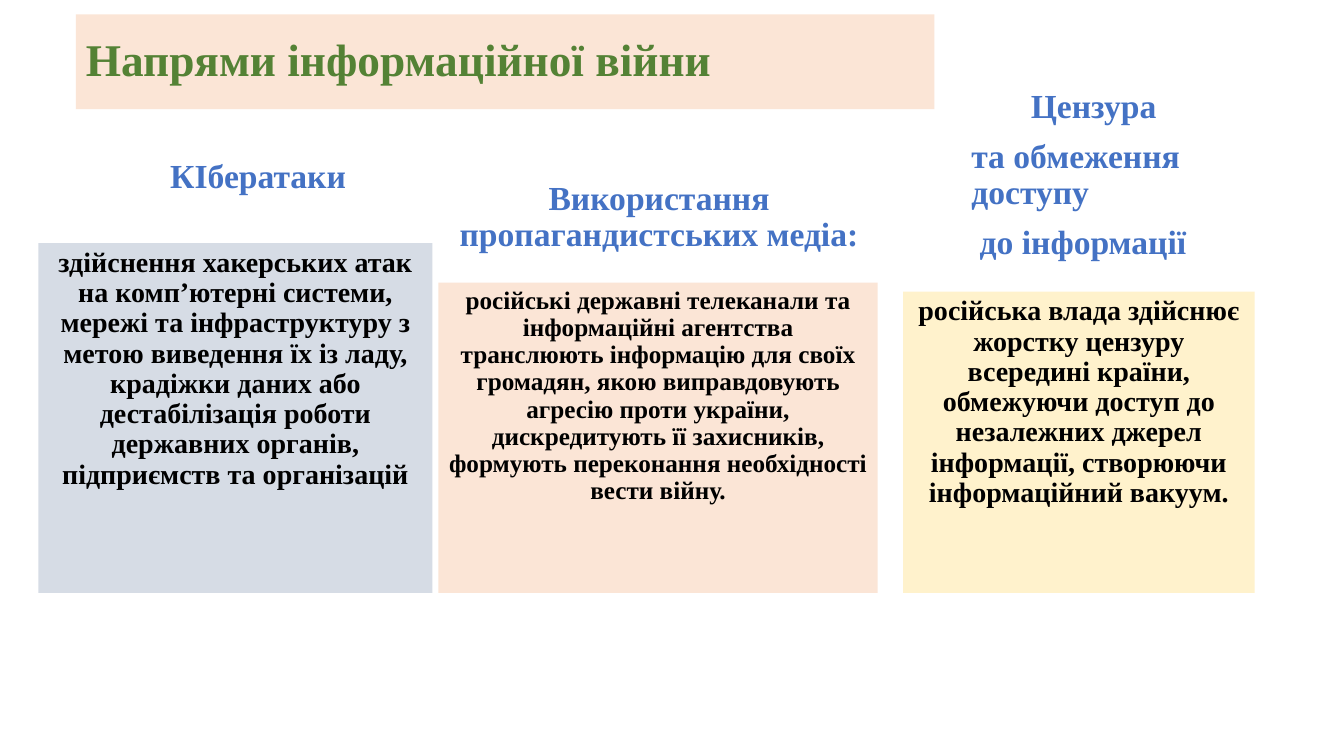
"""Build a slide on three directions of information warfare."""
from pptx import Presentation
from pptx import util as u
from pptx.dml.color import RGBColor
from pptx.enum import text

theme = {
    "font": "Times New Roman",
    "green": "548235", "blue": "4472C4", "black": "000000",
    "peach": "FBE5D6", "gray": "D6DCE5", "cream": "FFF2CC",
    "title": 32.4, "head": 24, "large": 20, "small": 18,
}
LEFT, MID = text.PP_ALIGN.LEFT, text.PP_ALIGN.CENTER
TOP, BASE = text.MSO_ANCHOR.TOP, text.MSO_ANCHOR.BOTTOM


def place(shape, box, fill=None):
    shape.left, shape.top, shape.width, shape.height = map(u.Cm, box)
    if fill:
        shape.fill.solid()
        shape.fill.fore_color.rgb = RGBColor.from_string(theme[fill])


def write(shape, lines, size, color, align, anchor, dents=None):
    frame = shape.text_frame
    frame.word_wrap = True
    frame.auto_size = text.MSO_AUTO_SIZE.NONE
    frame.vertical_anchor = anchor
    frame.text = "\n".join(lines)
    for i, para in enumerate(frame.paragraphs):
        if dents:
            para._p.get_or_add_pPr().set("marL", str(u.Cm(dents[i])))
        para.alignment = align
        para.line_spacing = 0.9
        para.space_before = u.Pt(10 if i else 0)
        font = para.font
        font.name, font.size, font.bold = theme["font"], u.Pt(theme[size]), True
        font.color.rgb = RGBColor.from_string(theme[color])


deck = Presentation()
deck.slide_width, deck.slide_height = u.Cm(33.87), u.Cm(19.05)
slide = deck.slides.add_slide(deck.slide_layouts[5])

title = slide.shapes.title
place(title, (1.91, 0.36, 21.64, 2.39), "peach")
write(title, ["Напрями інформаційної війни"], "title", "green", LEFT,
      text.MSO_ANCHOR.MIDDLE)

columns = [
    (["КІбератаки"], (1.91, 3.81, 9.19, 1.24), MID, None,
     "здійснення хакерських атак на комп’ютерні системи, мережі та "
     "інфраструктуру з метою виведення їх із ладу, крадіжки даних або "
     "дестабілізація роботи державних органів, підприємств та організацій",
     (0.97, 6.13, 9.93, 8.81), "gray", "large"),
    (["Використання пропагандистських медіа:"], (11.1, 3.15, 11.02, 3.38),
     MID, None,
     "російські державні телеканали та інформаційні агентства транслюють "
     "інформацію для своїх громадян, якою виправдовують агресію проти "
     "україни, дискредитують її захисників, формують переконання "
     "необхідності вести війну.",
     (11.05, 7.12, 11.07, 7.82), "peach", "small"),
    (["Цензура", "та обмеження\vдоступу", "до інформації"],
     (22.76, 3.15, 9.53, 3.58), LEFT, (2.97, 1.47, 1.68),
     "російська влада здійснює жорстку цензуру всередині країни, обмежуючи "
     "доступ до незалежних джерел інформації, створюючи інформаційний вакуум.",
     (22.76, 7.35, 8.86, 7.59), "cream", "large"),
]
for head, spot, align, dents, body, box, fill, size in columns:
    label = slide.shapes.add_textbox(0, 0, 0, 0)
    place(label, spot)
    write(label, head, "head", "blue", align, BASE, dents)
    card = slide.shapes.add_textbox(0, 0, 0, 0)
    place(card, box, fill)
    write(card, [body], size, "black", MID, TOP)

deck.save("out.pptx")
